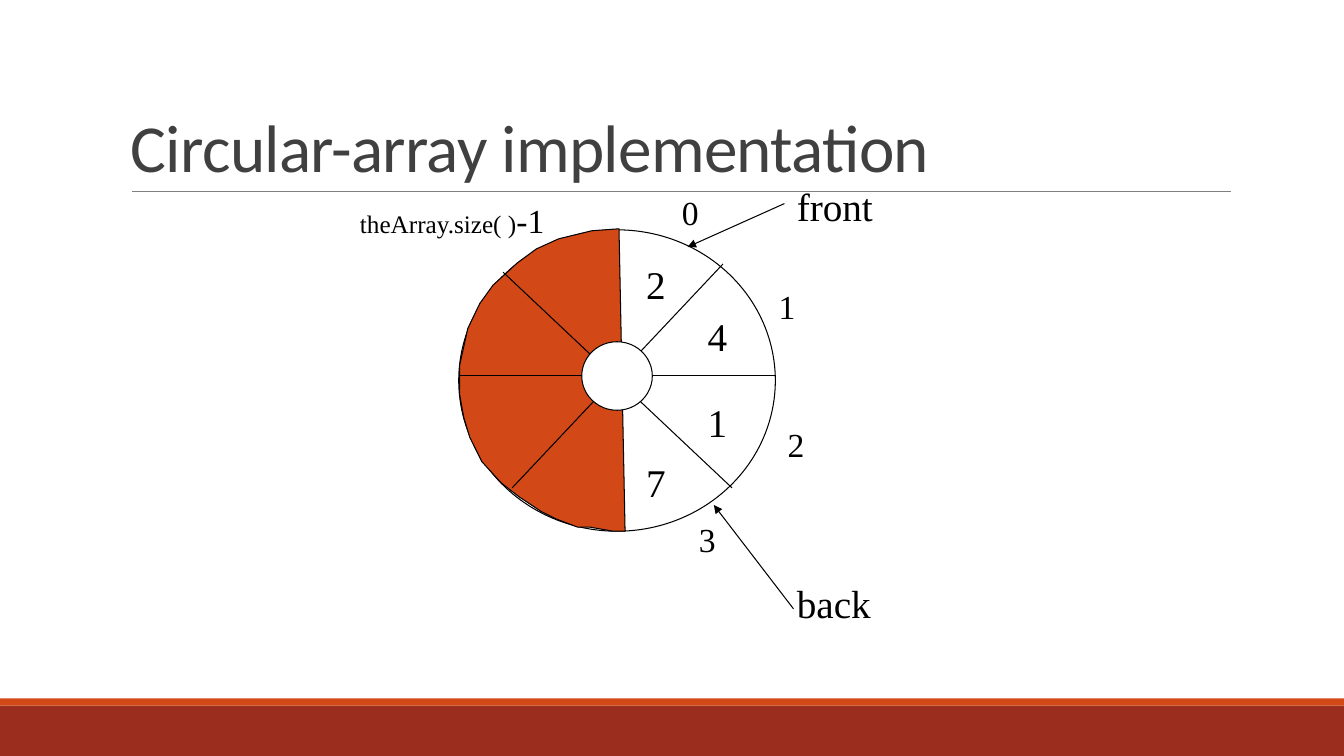
from lxml.etree import SubElement
from pptx import Presentation
from pptx.dml.color import RGBColor
from pptx.enum.shapes import MSO_CONNECTOR, MSO_SHAPE
from pptx.enum.text import MSO_ANCHOR, PP_ALIGN
from pptx.oxml.ns import qn
from pptx.util import Inches, Pt


def color(value):
    return RGBColor.from_string(value)


def style(shape, fill, line=None):
    shape.shadow.inherit = False
    shape.fill.solid()
    shape.fill.fore_color.rgb = color(fill)
    if line:
        shape.line.color.rgb = color(line)
        shape.line.width = Pt(0.75)
    else:
        shape.line.fill.background()


deck = Presentation()
deck.slide_width, deck.slide_height = Inches(13.33), Inches(7.5)
page = deck.slides.add_slide(deck.slide_layouts[6])
shapes = page.shapes

for top, height, fill in [(7, 0.5, "9B2D1F"), (6.93, 0.07, "D34817")]:
    band = shapes.add_shape(MSO_SHAPE.RECTANGLE, 0, Inches(top), deck.slide_width, Inches(height))
    style(band, fill)

ring = shapes.add_shape(MSO_SHAPE.OVAL, Inches(4.55), Inches(2.28), Inches(3.14), Inches(2.99))
style(ring, "FFFFFF", "000000")

empty_half = [
    (6.14, 2.27), (5.87, 2.29), (5.54, 2.37), (5.32, 2.47), (5.13, 2.61), (4.89, 2.83),
    (4.76, 3.01), (4.64, 3.26), (4.56, 3.62), (4.56, 3.92), (4.6, 4.14), (4.66, 4.34),
    (4.78, 4.58), (4.97, 4.79), (5.15, 4.93), (5.36, 5.07), (5.52, 5.15), (5.73, 5.23),
    (5.85, 5.23), (6.08, 5.27), (6.2, 5.27),
]
points = [(Inches(x), Inches(y)) for x, y in empty_half]
outline = shapes.build_freeform(*points[0])
outline.add_line_segments(points[1:], close=True)
style(outline.convert_to_shape(), "D34817", "000000")

lines = [
    (1.31, 1.9, 12.21, 1.9, "808080", 0.5, False),
    (4.55, 3.73, 7.7, 3.73, "000000", 0.75, False),
    (7.17, 2.62, 5.08, 4.84, "000000", 0.75, False),
    (4.99, 2.7, 7.26, 4.84, "000000", 0.75, False),
    (7.78, 2.02, 6.82, 2.45, "000000", 0.75, True),
    (7.87, 6.04, 7.08, 5.01, "000000", 0.75, True),
]
for x1, y1, x2, y2, stroke, width, arrow in lines:
    line = shapes.add_connector(
        MSO_CONNECTOR.STRAIGHT, Inches(x1), Inches(y1), Inches(x2), Inches(y2))
    line.line.color.rgb = color(stroke)
    line.line.width = Pt(width)
    if arrow:
        SubElement(line.line._get_or_add_ln(), qn("a:tailEnd"), type="triangle", w="med", len="med")
    SubElement(line._element.spPr, qn("a:effectLst"))

hub = shapes.add_shape(MSO_SHAPE.OVAL, Inches(5.77), Inches(3.39), Inches(0.7), Inches(0.68))
style(hub, "FFFFFF", "000000")

labels = [
    (6.3, 2.53, 0.41, 0.58, [("2", 28)]),
    (6.91, 3.05, 0.41, 0.58, [("4", 28)]),
    (6.91, 3.9, 0.41, 0.58, [("1", 28)]),
    (6.3, 4.5, 0.41, 0.58, [("7", 28)]),
    (6.65, 1.85, 0.39, 0.51, [("0", 24)]),
    (7.61, 2.79, 0.39, 0.51, [("1", 24)]),
    (7.7, 4.16, 0.39, 0.51, [("2", 24)]),
    (6.82, 5.1, 0.39, 0.51, [("3", 24)]),
    (3.41, 1.93, 2.15, 0.51, [("theArray.size( )", 18), ("-1", 24)]),
    (7.78, 1.76, 1, 0.58, [("front", 28)]),
    (7.78, 5.7, 0.98, 0.58, [("back", 28)]),
]
for left, top, width, height, spans in labels:
    box = shapes.add_textbox(Inches(left), Inches(top), Inches(width), Inches(height))
    box.text_frame.word_wrap = False
    para = box.text_frame.paragraphs[0]
    para.alignment = PP_ALIGN.CENTER
    for text, size in spans:
        span = para.add_run()
        span.text = text
        span.font.color.rgb = color("000000")
        for name, value in {"name": "Times New Roman", "size": Pt(size)}.items():
            setattr(span.font, name, value)

title = shapes.add_textbox(Inches(1.2), Inches(0.31), Inches(11), Inches(1.59))
title.text_frame.word_wrap = True
title.text_frame.vertical_anchor = MSO_ANCHOR.BOTTOM
para = title.text_frame.paragraphs[0]
para.line_spacing = 0.85
span = para.add_run()
span.text = "Circular-array implementation"
span.font.color.rgb = color("404040")
for name, value in {"name": "Calibri", "size": Pt(48)}.items():
    setattr(span.font, name, value)
span.font._element.set("spc", "-50")

deck.save("out.pptx")
